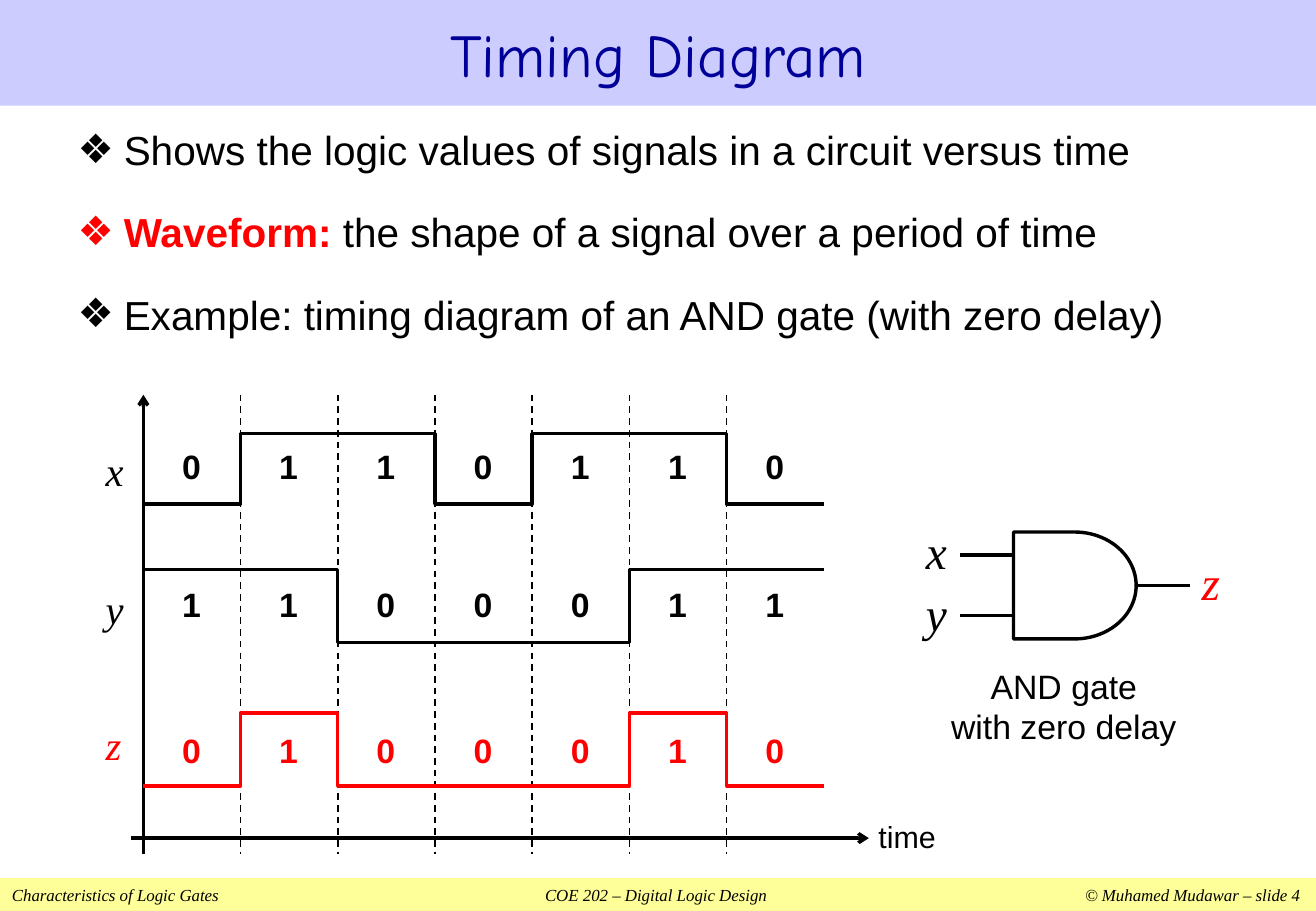
from dataclasses import dataclass

from lxml import etree
from pptx import Presentation
from pptx.dml.color import RGBColor
from pptx.enum.dml import MSO_LINE
from pptx.enum.shapes import MSO_CONNECTOR, MSO_SHAPE
from pptx.enum.text import MSO_ANCHOR, MSO_AUTO_SIZE, PP_ALIGN
from pptx.oxml.ns import qn
from pptx.util import Inches, Pt

RECTANGLE, DELAY = MSO_SHAPE.RECTANGLE, MSO_SHAPE.FLOWCHART_DELAY
STRAIGHT, DASH = MSO_CONNECTOR.STRAIGHT, MSO_LINE.DASH
MIDDLE, FIT = MSO_ANCHOR.MIDDLE, MSO_AUTO_SIZE.SHAPE_TO_FIT_TEXT
LEFT, CENTER = PP_ALIGN.LEFT, PP_ALIGN.CENTER


@dataclass(frozen=True)
class Theme:
    black: str = "000000"
    white: str = "FFFFFF"
    red: str = "FF0000"
    navy: str = "000099"
    title_band: str = "CCCCFF"
    footer_band: str = "FFFF99"
    sans: str = "Arial"
    serif: str = "Times New Roman"
    heading: str = "Comic Neue"
    title_size: int = 36
    pin_size: int = 28
    body_size: int = 24
    bit_size: int = 20
    axis_size: int = 18
    footer_size: int = 10
    stroke: int = 2
    hairline: int = 1


THEME = Theme()
PAGE_WIDTH, PAGE_HEIGHT = 10.83, 7.5

TITLE = "Timing Diagram"
# Each bullet: emphasised lead, then plain text
BULLETS = [
    ("", "Shows the logic values of signals in a circuit versus time"),
    ("Waveform:", " the shape of a signal over a period of time"),
    ("", "Example: timing diagram of an AND gate (with zero delay)"),
]
FOOTER = ["Characteristics of Logic Gates", "COE 202 – Digital Logic Design",
          "© Muhamed Mudawar – slide 4"]
FOOTER_TABS = [(5.3, "ctr"), (10.6, "r")]

# Each signal: name, bits, high level, low level, top of name, top of bits, colour
SIGNALS = [
    ("x", "0110110", 3.57, 4.15, 3.62, 3.62, THEME.black),
    ("y", "1100011", 4.69, 5.29, 4.76, 4.76, THEME.black),
    ("z", "0100010", 5.87, 6.47, 5.88, 5.96, THEME.red),
]
WAVE_LEFT, BIT_STEP = 1.18, 0.8
CHART_TOP, CHART_BOTTOM, TIME_AXIS = 3.25, 7.03, 6.9

GATE = (8.34, 4.38, 1.01, 0.88)
WIRE = 0.44
# Each pin: name, left and top of name, start of wire, height of wire, colour
PINS = [
    ("x", 7.52, 4.25, GATE[0] - WIRE, 4.57, THEME.black),
    ("y", 7.52, 4.76, GATE[0] - WIRE, 5.07, THEME.black),
    ("z", 9.79, 4.51, GATE[0] + GATE[2], 4.82, THEME.red),
]
GATE_CAPTION = "AND gate\nwith zero delay"


def color(value):
    return RGBColor.from_string(value)


def style(paragraph, size, font, value, bold=False, italic=False, align=LEFT):
    paragraph.alignment = align
    paragraph.font.size = Pt(size)
    paragraph.font.name = font
    paragraph.font.color.rgb = color(value)
    paragraph.font.bold = bold
    paragraph.font.italic = italic


def add_label(shapes, place, text, size, font, value, **options):
    """Add a text box that fits its unwrapped text."""
    box = shapes.add_textbox(*map(Inches, place))
    frame = box.text_frame
    frame.word_wrap = False
    frame.auto_size = FIT
    frame.text = text
    for paragraph in frame.paragraphs:
        style(paragraph, size, font, value, **options)


def add_filled(shapes, kind, place, fill):
    shape = shapes.add_shape(kind, *map(Inches, place))
    shape.shadow.inherit = False
    shape.fill.solid()
    shape.fill.fore_color.rgb = color(fill)
    shape.line.fill.background()
    return shape


def draw_line(line, value, width):
    line.color.rgb = color(value)
    line.width = Pt(width)


def add_line(shapes, start, end, width=THEME.stroke, dashed=False, arrow=False):
    connector = shapes.add_connector(STRAIGHT, *map(Inches, start + end))
    draw_line(connector.line, THEME.black, width)
    if dashed:
        connector.line.dash_style = DASH
    properties = connector.element.spPr
    if arrow:
        etree.SubElement(properties.find(qn("a:ln")), qn("a:tailEnd"), type="arrow")
    etree.SubElement(properties, qn("a:effectLst"))


def add_wave(shapes, bits, high, low, value):
    points = []
    for index, bit in enumerate(bits):
        level = Inches(high if bit == "1" else low)
        left = WAVE_LEFT + index * BIT_STEP
        points += [(Inches(left), level), (Inches(left + BIT_STEP), level)]
    builder = shapes.build_freeform(*points[0])
    builder.add_line_segments(points[1:], close=False)
    wave = builder.convert_to_shape()
    wave.shadow.inherit = False
    wave.fill.background()
    draw_line(wave.line, value, THEME.stroke)


def add_bands(shapes):
    """Add the title band and the footer band."""
    band = add_filled(shapes, RECTANGLE, (0, 0, PAGE_WIDTH, 0.87), THEME.title_band)
    band.text_frame.text = TITLE
    band.text_frame.vertical_anchor = MIDDLE
    style(band.text_frame.paragraphs[0], THEME.title_size, THEME.heading,
          THEME.navy, align=CENTER)

    band = add_filled(shapes, RECTANGLE, (0, 7.23, PAGE_WIDTH, 0.27), THEME.footer_band)
    band.text_frame.text = "\t".join(FOOTER)
    band.text_frame.vertical_anchor = MIDDLE
    paragraph = band.text_frame.paragraphs[0]
    tabs = etree.SubElement(paragraph._p.get_or_add_pPr(), qn("a:tabLst"))
    for position, align in FOOTER_TABS:
        etree.SubElement(tabs, qn("a:tab"), pos=str(Inches(position)), algn=align)
    style(paragraph, THEME.footer_size, THEME.serif, THEME.black, italic=True)


def add_bullets(shapes):
    frame = shapes.add_textbox(*map(Inches, (0.54, 0.98, 9.75, 1.95))).text_frame
    frame.word_wrap = True
    for index, (lead, text) in enumerate(BULLETS):
        paragraph = frame.add_paragraph() if index else frame.paragraphs[0]
        properties = paragraph._p.get_or_add_pPr()
        properties.set("marL", str(Inches(0.38)))
        properties.set("indent", str(-Inches(0.38)))
        etree.SubElement(properties, qn("a:buFont"), typeface=THEME.sans)
        etree.SubElement(properties, qn("a:buChar"), char="❖")
        paragraph.space_before = Pt(20)
        style(paragraph, THEME.body_size, THEME.sans, THEME.black)
        if lead:
            span = paragraph.add_run()
            span.text = lead
            span.font.bold = True
            span.font.color.rgb = color(THEME.red)
        paragraph.add_run().text = text


def add_gate(shapes):
    gate = add_filled(shapes, DELAY, GATE, THEME.white)
    draw_line(gate.line, THEME.black, THEME.stroke)
    for name, left, top, start, height, value in PINS:
        add_line(shapes, (start, height), (start + WIRE, height))
        add_label(shapes, (left, top, 0.38, 0.57), name, THEME.pin_size,
                  THEME.serif, value, italic=True)


def add_timing(shapes):
    for index in range(1, len(SIGNALS[0][1])):
        edge = WAVE_LEFT + index * BIT_STEP
        add_line(shapes, (edge, CHART_TOP), (edge, CHART_BOTTOM), THEME.hairline, dashed=True)
    add_line(shapes, (WAVE_LEFT, CHART_BOTTOM), (WAVE_LEFT, CHART_TOP), arrow=True)
    add_line(shapes, (1.08, TIME_AXIS), (7.15, TIME_AXIS), arrow=True)
    add_label(shapes, (7.13, 6.69, 0.68, 0.4), "time", THEME.axis_size,
              THEME.sans, THEME.black)
    for name, bits, high, low, name_top, bit_top, value in SIGNALS:
        add_wave(shapes, bits, high, low, value)
        add_label(shapes, (0.77, name_top, 0.35, 0.5), name, THEME.body_size,
                  THEME.serif, value, italic=True)
        for index, bit in enumerate(bits):
            left = WAVE_LEFT + (index + 0.5) * BIT_STEP - 0.18
            add_label(shapes, (left, bit_top, 0.36, 0.44), bit, THEME.bit_size,
                      THEME.sans, value, bold=True)


def main():
    deck = Presentation()
    deck.slide_width, deck.slide_height = Inches(PAGE_WIDTH), Inches(PAGE_HEIGHT)
    page = deck.slides.add_slide(deck.slide_layouts[6])
    add_bands(page.shapes)
    add_bullets(page.shapes)
    add_gate(page.shapes.add_group_shape().shapes)
    add_timing(page.shapes.add_group_shape().shapes)
    add_label(page.shapes, (7.72, 5.43, 2.07, 0.77), GATE_CAPTION, THEME.bit_size,
              THEME.sans, THEME.black, align=CENTER)
    deck.save("out.pptx")


if __name__ == "__main__":
    main()
